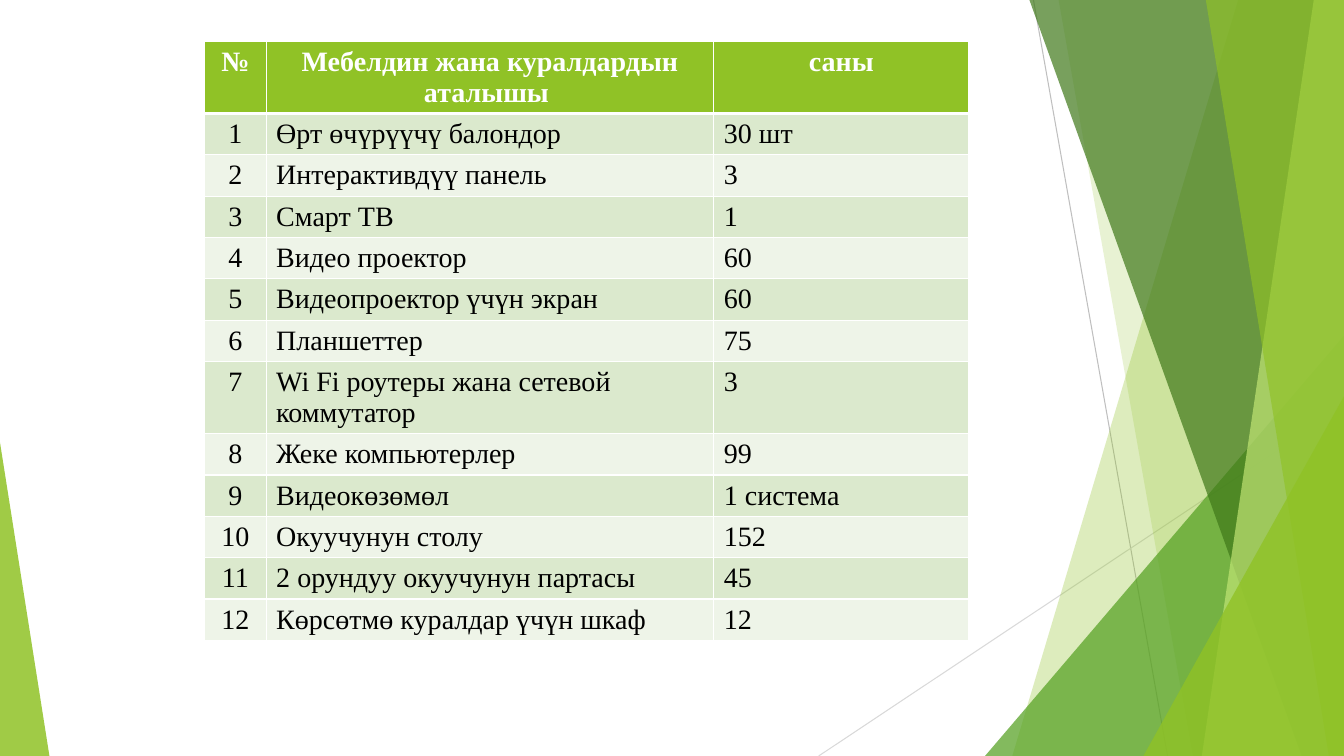
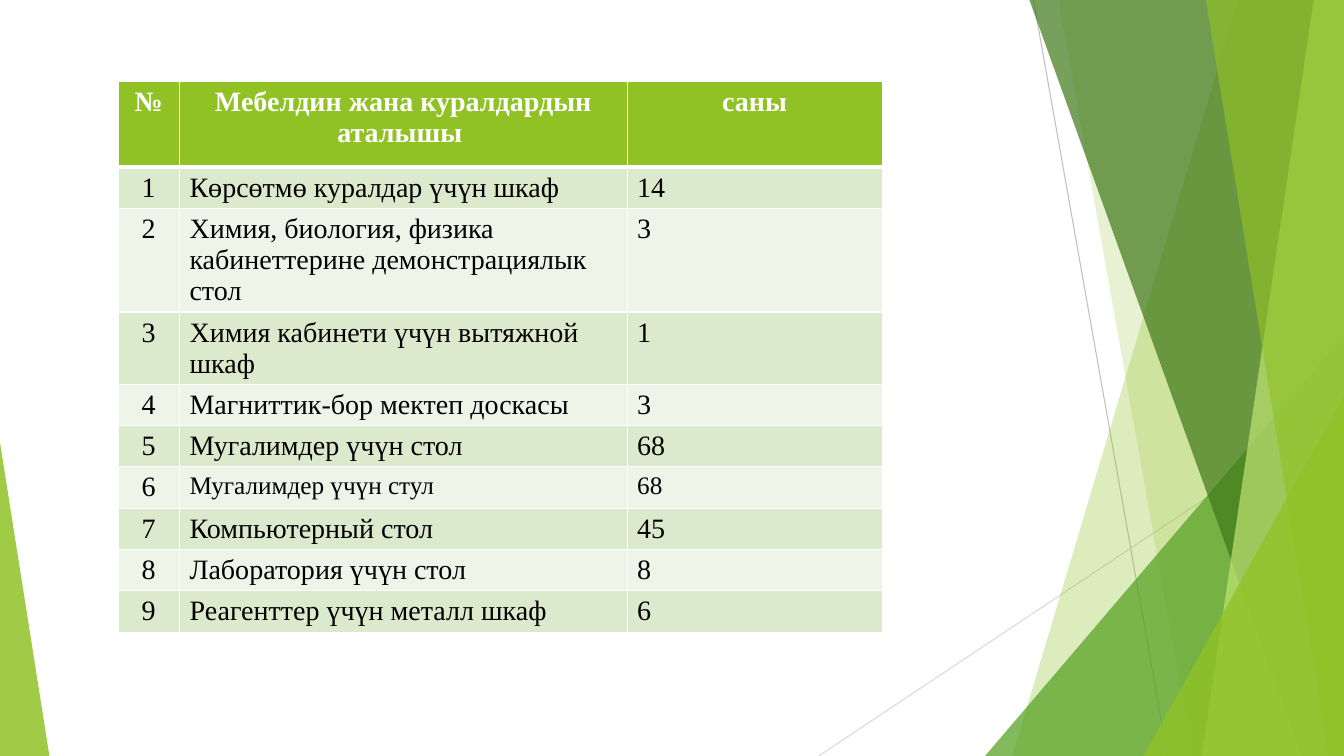
from dataclasses import dataclass

from lxml import etree
from pptx import Presentation
from pptx.dml.color import RGBColor
from pptx.enum.shapes import MSO_CONNECTOR, MSO_SHAPE
from pptx.enum.text import PP_ALIGN
from pptx.oxml.ns import qn
from pptx.util import Inches, Pt

STRAIGHT = MSO_CONNECTOR.STRAIGHT
TRIANGLE = MSO_SHAPE.ISOSCELES_TRIANGLE
CENTER, LEFT = PP_ALIGN.CENTER, PP_ALIGN.LEFT

WHITE = RGBColor(0xFF, 0xFF, 0xFF)
BLACK = RGBColor(0x00, 0x00, 0x00)
LIME = RGBColor(0x90, 0xC2, 0x26)
PALE_LIME = RGBColor(0xC0, 0xE4, 0x74)
GREEN = RGBColor(0x54, 0xA0, 0x21)
DARK_GREEN = RGBColor(0x3F, 0x78, 0x19)
GRAY = RGBColor(0xBF, 0xBF, 0xBF)
LIGHT_GRAY = RGBColor(0xD9, 0xD9, 0xD9)
BANDS = (RGBColor(0xDB, 0xE9, 0xCD), RGBColor(0xEE, 0xF4, 0xE8))

FONT = "Times New Roman"
SLIDE_W, SLIDE_H = 13.33, 7.5
COLUMN_WIDTHS = (0.61, 4.44, 2.53)
ROW_HEIGHT = 0.41
HEADINGS = ("№", "Мебелдин жана куралдардын аталышы ", "саны")


@dataclass(frozen=True)
class Ray:
    start: tuple[float, float]
    end: tuple[float, float]
    color: RGBColor


@dataclass(frozen=True)
class Blade:
    """Band from a slanted left edge to the right side of the slide."""
    top_x: float
    bottom_x: float
    color: RGBColor
    opacity: int


@dataclass(frozen=True)
class Wedge:
    """Triangle standing on the bottom edge; apex is 0 (left) to 1 (right)."""
    left: float
    top: float
    width: float
    apex: float
    color: RGBColor
    opacity: int


@dataclass(frozen=True)
class Item:
    name: str
    amount: str
    size: int = 20


@dataclass(frozen=True)
class Inventory:
    left: float
    top: float
    header_height: float
    items: tuple[Item, ...]


RAYS = (
    Ray((10.25, 0), (11.58, SLIDE_H), GRAY),
    Ray((SLIDE_W, 4.03), (8.12, SLIDE_H), LIGHT_GRAY),
)

# Back to front
FACETS = (
    Blade(12.28, 10.04, LIME, 30),
    Blade(10.5, 11.83, LIME, 20),
    Wedge(9.77, 3.33, 3.56, 1, GREEN, 72),
    Blade(10.21, 12.91, DARK_GREEN, 70),
    Blade(13.03, 11.92, PALE_LIME, 70),
    Blade(11.96, 13.18, LIME, 65),
    Wedge(11.34, 3.93, 1.99, 1, LIME, 80),
    Wedge(0, 4.39, 0.49, 0, LIME, 85),
)

INVENTORIES = (
    Inventory(2.03, 0.41, ROW_HEIGHT, (
        Item("Өрт өчүрүүчү балондор", "30 шт"),
        Item("Интерактивдүү панель", "3"),
        Item("Смарт ТВ", "1"),
        Item("Видео проектор", "60"),
        Item("Видеопроектор үчүн экран", "60"),
        Item("Планшеттер", "75"),
        Item("Wi Fi роутеры жана сетевой коммутатор", "3"),
        Item("Жеке компьютерлер", "99"),
        Item("Видеокөзөмөл", "1 система"),
        Item("Окуучунун столу", "152"),
        Item("2 орундуу окуучунун партасы", "45"),
        Item("Көрсөтмө куралдар үчүн шкаф", "12"),
    )),
    Inventory(1.17, 0.81, 0.85, (
        Item("Көрсөтмө куралдар үчүн шкаф", "14"),
        Item("Химия, биология, физика кабинеттерине демонстрациялык стол", "3"),
        Item("Химия кабинети үчүн вытяжной шкаф", "1"),
        Item("Магниттик-бор мектеп доскасы", "3"),
        Item("Мугалимдер үчүн стол", "68"),
        Item("Мугалимдер үчүн стул", "68", 18),
        Item("Компьютерный стол", "45"),
        Item("Лаборатория үчүн стол", "8"),
        Item("Реагенттер үчүн металл шкаф", "6"),
    )),
)


# Background decoration
def draw_ray(slide, ray: Ray) -> None:
    points = [Inches(value) for value in ray.start + ray.end]
    line = slide.shapes.add_connector(STRAIGHT, *points)
    line.line.color.rgb = ray.color
    line.line.width = Pt(0.75)
    etree.SubElement(line.element.spPr, qn("a:effectLst"))


def draw_facet(slide, facet: Blade | Wedge) -> None:
    if isinstance(facet, Blade):
        builder = slide.shapes.build_freeform(Inches(facet.top_x), 0)
        corners = ((SLIDE_W, 0), (SLIDE_W, SLIDE_H), (facet.bottom_x, SLIDE_H))
        builder.add_line_segments([(Inches(x), Inches(y)) for x, y in corners])
        shape = builder.convert_to_shape()
    else:
        shape = slide.shapes.add_shape(
            TRIANGLE, Inches(facet.left), Inches(facet.top),
            Inches(facet.width), Inches(SLIDE_H - facet.top))
        shape.adjustments[0] = facet.apex
    shape.shadow.inherit = False
    shape.line.fill.background()
    shape.fill.solid()
    shape.fill.fore_color.rgb = facet.color
    color = shape.element.spPr.find(qn("a:solidFill")).find(qn("a:srgbClr"))
    etree.SubElement(color, qn("a:alpha"), val=str(facet.opacity * 1000))


# Inventory table
def set_borders(cell, top: float, bottom: float) -> None:
    properties = cell._tc.get_or_add_tcPr()
    for side, width in (("L", 1), ("R", 1), ("T", top), ("B", bottom)):
        line = etree.SubElement(properties, qn(f"a:ln{side}"), w=str(Pt(width)))
        fill = etree.SubElement(line, qn("a:solidFill"))
        etree.SubElement(fill, qn("a:srgbClr"), val=str(WHITE))


def write_cell(cell, text: str, size: int, align: PP_ALIGN, color: RGBColor,
               fill: RGBColor, bold: bool) -> None:
    cell.fill.solid()
    cell.fill.fore_color.rgb = fill
    paragraph = cell.text_frame.paragraphs[0]
    paragraph.alignment = align
    run = paragraph.add_run()
    run.text = text
    run.font.name = FONT
    run.font.size = Pt(size)
    run.font.bold = bold
    run.font.color.rgb = color


def draw_inventory(slide, inventory: Inventory) -> None:
    row_count = len(inventory.items) + 1
    height = inventory.header_height + ROW_HEIGHT * len(inventory.items)
    table = slide.shapes.add_table(
        row_count, len(COLUMN_WIDTHS), Inches(inventory.left),
        Inches(inventory.top), Inches(sum(COLUMN_WIDTHS)), Inches(height)).table
    for column, width in zip(table.columns, COLUMN_WIDTHS):
        column.width = Inches(width)
    for index, row in enumerate(table.rows):
        row.height = Inches(ROW_HEIGHT if index else inventory.header_height)
        for cell in row.cells:
            set_borders(cell, 3 if index == 1 else 1, 1 if index else 3)

    for column, heading in enumerate(HEADINGS):
        write_cell(table.cell(0, column), heading, 20, CENTER, WHITE, LIME, True)
    for number, item in enumerate(inventory.items, start=1):
        band = BANDS[(number - 1) % 2]
        entries = ((str(number), 20, CENTER), (item.name, item.size, LEFT),
                   (item.amount, item.size, LEFT))
        for column, (text, size, align) in enumerate(entries):
            write_cell(table.cell(number, column), text, size, align, BLACK,
                       band, False)


def main() -> None:
    deck = Presentation()
    deck.slide_width, deck.slide_height = Inches(SLIDE_W), Inches(SLIDE_H)
    blank = deck.slide_layouts[6]
    for inventory in INVENTORIES:
        slide = deck.slides.add_slide(blank)
        for ray in RAYS:
            draw_ray(slide, ray)
        for facet in FACETS:
            draw_facet(slide, facet)
        draw_inventory(slide, inventory)
    deck.save("out.pptx")


if __name__ == "__main__":
    main()
